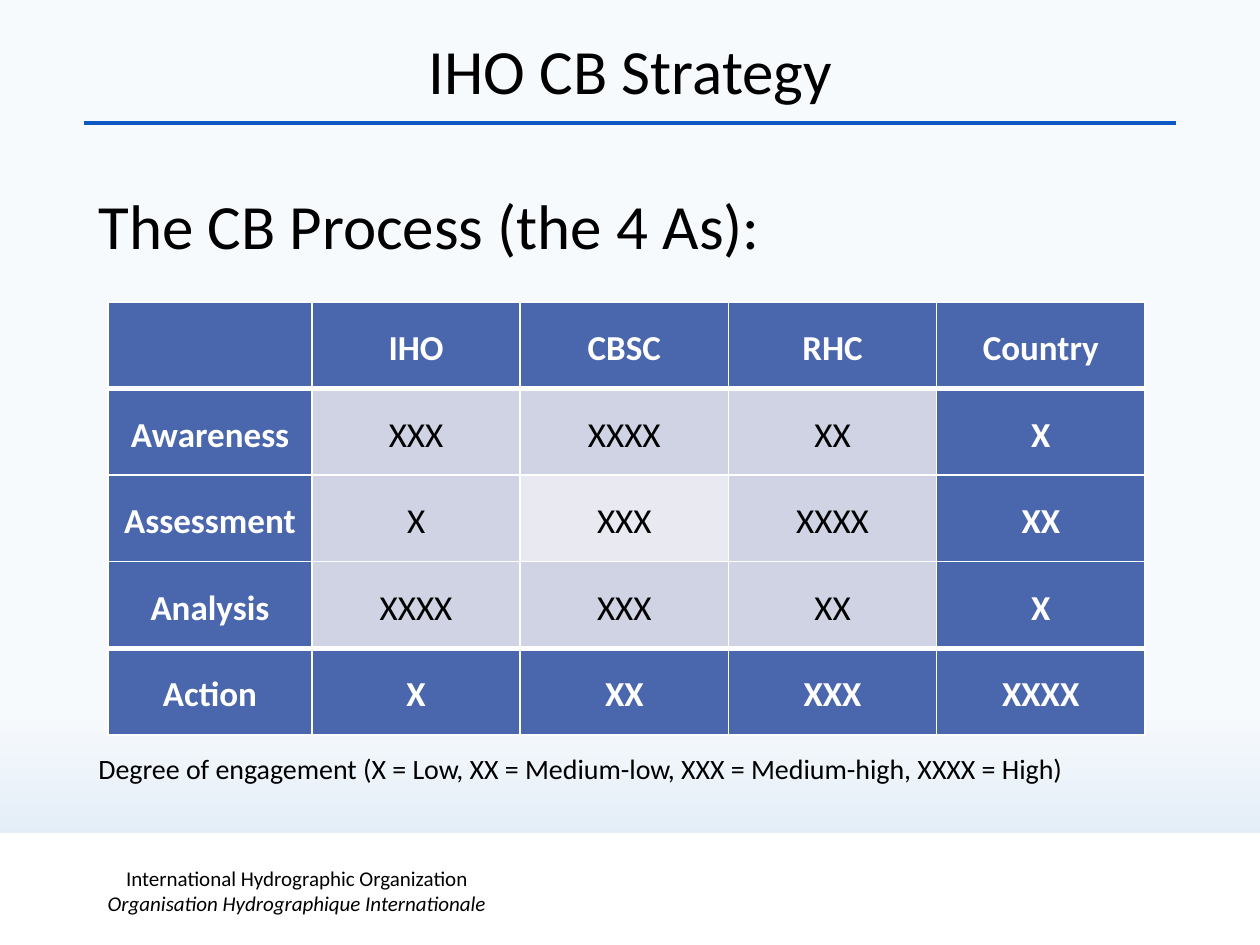
from lxml.etree import SubElement
from pptx import Presentation
from pptx.dml.color import RGBColor
from pptx.enum.shapes import MSO_CONNECTOR, MSO_SHAPE
from pptx.enum.text import MSO_ANCHOR, PP_ALIGN
from pptx.oxml.ns import qn
from pptx.util import Pt

UNIT = 914400 / 126
FONT = "Calibri"
HEX = {
    "ink": "000000", "white": "FFFFFF", "rule": "0E58C4",
    "sky": "F7FAFD", "mist": "D0E2F1",
    "dark": "4A66AC", "light": "D0D3E3", "pale": "E9EAF1",
}
ROWS = [
    ["", "IHO", "CBSC", "RHC", "Country"],
    ["Awareness", "XXX", "XXXX", "XX", "X"],
    ["Assessment", "X", "XXX", "XXXX", "XX"],
    ["Analysis", "XXXX", "XXX", "XX", "X"],
    ["Action", "X", "XX", "XXX", "XXXX"],
]


def px(n):
    return round(n * UNIT)


def rgb(name):
    return RGBColor.from_string(HEX[name])


def write(para, text, size, color="ink", bold=False, italic=False,
          align=PP_ALIGN.LEFT, line=None, before=None):
    para.alignment = align
    if line:
        para.line_spacing = line
    if before is not None:
        para.space_before = Pt(before)
    run = para.add_run()
    run.text = text
    font = run.font
    font.name, font.size = FONT, Pt(size)
    font.bold, font.italic = bold, italic
    font.color.rgb = rgb(color)


def add_box(slide, box):
    frame = slide.shapes.add_textbox(*map(px, box)).text_frame
    frame.word_wrap = True
    return frame


def add_back(slide):
    fill = slide.background.fill
    fill.gradient()
    fill.gradient_angle = 270
    for stop, at, name in zip(fill.gradient_stops, (0.75, 1), ("sky", "mist")):
        stop.position = at
        stop.color.rgb = rgb(name)


def add_title(slide, box):
    """Place the title with the rule below it."""
    left, top, width, height = box
    title = slide.shapes.title
    title.left, title.top, title.width, title.height = map(px, box)
    frame = title.text_frame
    frame.vertical_anchor = MSO_ANCHOR.BOTTOM
    write(frame.paragraphs[0], "IHO CB Strategy", 36,
          align=PP_ALIGN.CENTER, line=0.9, before=0)
    low = px(top + height + 9)
    rule = slide.shapes.add_connector(
        MSO_CONNECTOR.STRAIGHT, px(left - 2), low, px(left + width + 1), low)
    rule.line.color.rgb = rgb("rule")
    rule.line.width = Pt(2.25)
    SubElement(rule._element.spPr, qn("a:effectLst"))


def add_foot(slide, box):
    """Place the white band with the name in two languages."""
    left, top, width, height = box
    band = slide.shapes.add_shape(MSO_SHAPE.RECTANGLE, *map(px, box))
    band.shadow.inherit = False
    band.fill.solid()
    band.fill.fore_color.rgb = rgb("white")
    band.line.fill.background()
    frame = add_box(slide, (left + 84, top + 33, 426, 50))
    frame.vertical_anchor = MSO_ANCHOR.MIDDLE
    para = frame.paragraphs[0]
    write(para, "International Hydrographic Organization", 12,
          align=PP_ALIGN.CENTER)
    para.add_line_break()
    write(para, "Organisation Hydrographique Internationale", 12,
          italic=True, align=PP_ALIGN.CENTER)


def add_body(slide, box):
    """Place the heading and the key, with room for the table between."""
    frame = add_box(slide, box)
    write(frame.paragraphs[0], "The CB Process (the 4 As):", 36, line=0.9)
    write(frame.add_paragraph(),
          "Degree of engagement (X = Low, XX = Medium-low, "
          "XXX = Medium-high, XXXX = High)", 16, line=0.9, before=281)


def add_edge(cell, side, width):
    edge = SubElement(cell._tc.get_or_add_tcPr(), qn(f"a:ln{side}"),
                      w=str(Pt(width)))
    fill = SubElement(edge, qn("a:solidFill"))
    SubElement(fill, qn("a:srgbClr"), val=HEX["white"])


def fill_cell(cell, text, row, col):
    last = len(ROWS) - 1
    rim = row in (0, last) or col in (0, last)
    thick = {(0, "B"), (1, "T"), (last - 1, "B"), (last, "T")}
    for side in "LRTB":
        add_edge(cell, side, 3 if (row, side) in thick else 1)
    mid = row == col == last // 2
    cell.fill.solid()
    cell.fill.fore_color.rgb = rgb("dark" if rim else "pale" if mid else "light")
    cell.margin_left = cell.margin_right = px(9)
    cell.margin_top = cell.margin_bottom = 0
    cell.vertical_anchor = MSO_ANCHOR.MIDDLE
    if text:
        write(cell.text_frame.paragraphs[0], text, 20, bold=rim,
              color="white" if rim else "ink",
              align=PP_ALIGN.CENTER, line=1.15)


def add_grid(slide, box, first):
    """Place the table; first is the width of the label column."""
    count = len(ROWS)
    table = slide.shapes.add_table(count, count, *map(px, box)).table
    table.first_row = table.horz_banding = False
    rest = (box[2] - first) / (count - 1)
    for col, part in enumerate(table.columns):
        part.width = px(rest if col else first)
    for row, texts in enumerate(ROWS):
        table.rows[row].height = px(box[3] / count)
        for col, text in enumerate(texts):
            fill_cell(table.cell(row, col), text, row, col)


def main():
    deck = Presentation()
    deck.slide_width, deck.slide_height = px(1260), px(945)
    slide = deck.slides.add_slide(deck.slide_layouts[5])
    add_back(slide)
    add_foot(slide, (0, 833, 1260, 112))
    add_body(slide, (86, 189, 1092, 627))
    add_title(slide, (86, 26, 1089, 88))
    add_grid(slide, (108, 302, 1037, 433), 204)
    deck.save("out.pptx")


if __name__ == "__main__":
    main()
